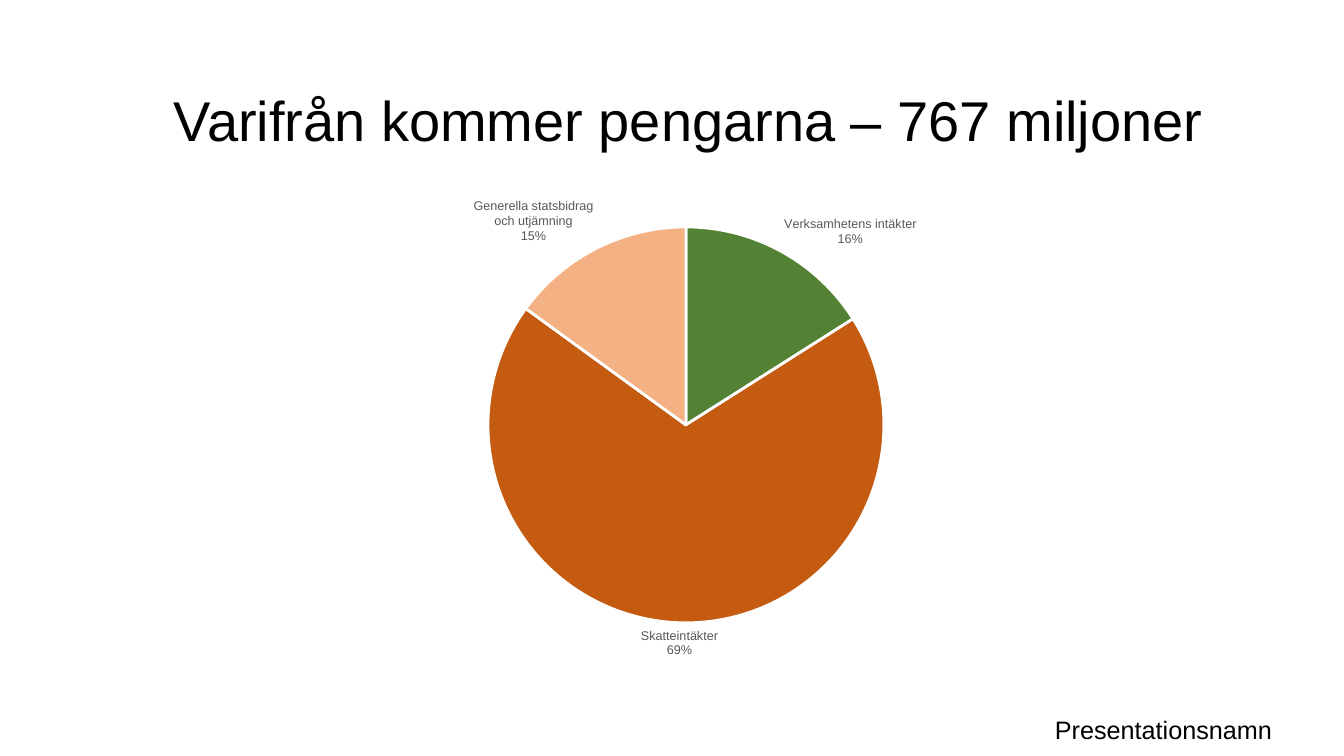
"""Build a slide with a pie chart of municipal income sources."""
from lxml import etree
from pptx import Presentation
from pptx.chart.data import CategoryChartData
from pptx.dml.color import RGBColor
from pptx.enum.chart import XL_CHART_TYPE as CT, XL_LABEL_POSITION as LP
from pptx.enum.text import MSO_ANCHOR as ANCHOR
from pptx.oxml import parse_xml
from pptx.oxml.ns import nsdecls, qn
from pptx.util import Pt

PX = 9071
FONT = "Arial"
BLACK = RGBColor(0x00, 0x00, 0x00)
WHITE = RGBColor(0xFF, 0xFF, 0xFF)
GRAY = RGBColor(0x59, 0x59, 0x59)
GREEN = RGBColor(0x54, 0x82, 0x35)
RUST = RGBColor(0xC5, 0x5A, 0x11)
PEACH = RGBColor(0xF4, 0xB1, 0x83)

SLIDE = (1344, 756)
TEXTS = [
    ("Varifrån kommer pengarna – 767 miljoner", (164, 57, 1082, 102), 40, ANCHOR.BOTTOM, 0.9),
    ("Presentationsnamn", (1045, 709, 288, 40), 18, ANCHOR.MIDDLE, 1.0),
]
INCOME = [
    ("Verksamhetens intäkter", 16, GREEN),
    ("Skatteintäkter", 69, RUST),
    ("Generella statsbidrag och utjämning", 15, PEACH),
]
CHART = (333, 174, 678, 498)
PIE = (488, 227, 396, 396)


def emu(box):
    return [v * PX for v in box]


def set_font(font, size, color):
    font.name, font.size = FONT, Pt(size)
    font.color.rgb = color


def add_text(s, text, box, size, anchor, spacing):
    tf = s.shapes.add_textbox(*emu(box)).text_frame
    tf.word_wrap = True
    tf.vertical_anchor = anchor
    p = tf.paragraphs[0]
    p.text = text
    p.line_spacing = spacing
    set_font(p.runs[0].font, size, BLACK)


def place_pie(chart):
    left, top, width, height = CHART
    x, y, w, h = PIE
    parts = {"x": (x - left) / width, "y": (y - top) / height, "w": w / width, "h": h / height}
    modes = '<c:layoutTarget val="inner"/><c:xMode val="edge"/><c:yMode val="edge"/>'
    sizes = "".join(f'<c:{k} val="{v:.4f}"/>' for k, v in parts.items())
    layout = parse_xml(f'<c:layout {nsdecls("c")}><c:manualLayout>{modes}{sizes}</c:manualLayout></c:layout>')
    area = chart.plots[0]._element.getparent()
    for old in area.findall(qn("c:layout")):
        area.remove(old)
    area.insert(0, layout)


def add_pie(s):
    data = CategoryChartData()
    data.categories = [name for name, _, _ in INCOME]
    data.add_series("Series 1", [value for _, value, _ in INCOME])
    chart = s.shapes.add_chart(CT.PIE, *emu(CHART), data).chart
    chart.has_legend = chart.has_title = False
    set_font(chart.font, 10, BLACK)
    plot = chart.plots[0]
    plot.vary_by_categories = True
    series = plot.series[0]
    for i, (_, _, color) in enumerate(INCOME):
        fmt = series.points[i].format
        fmt.fill.solid()
        fmt.fill.fore_color.rgb = color
        fmt.line.color.rgb = WHITE
        fmt.line.width = Pt(2)
    labels = series.data_labels
    set_font(labels.font, 9, GRAY)
    labels.show_value = False
    labels.show_category_name = labels.show_percentage = True
    labels.number_format, labels.number_format_is_linked = "0%", False
    labels.position = LP.OUTSIDE_END
    separator = etree.Element(qn("c:separator"))
    separator.text = "\n"
    labels._element.find(qn("c:showBubbleSize")).addnext(separator)
    place_pie(chart)


def main():
    prs = Presentation()
    prs.slide_width, prs.slide_height = emu(SLIDE)
    s = prs.slides.add_slide(prs.slide_layouts[6])
    for item in TEXTS:
        add_text(s, *item)
    add_pie(s)
    prs.save("out.pptx")


if __name__ == "__main__":
    main()
